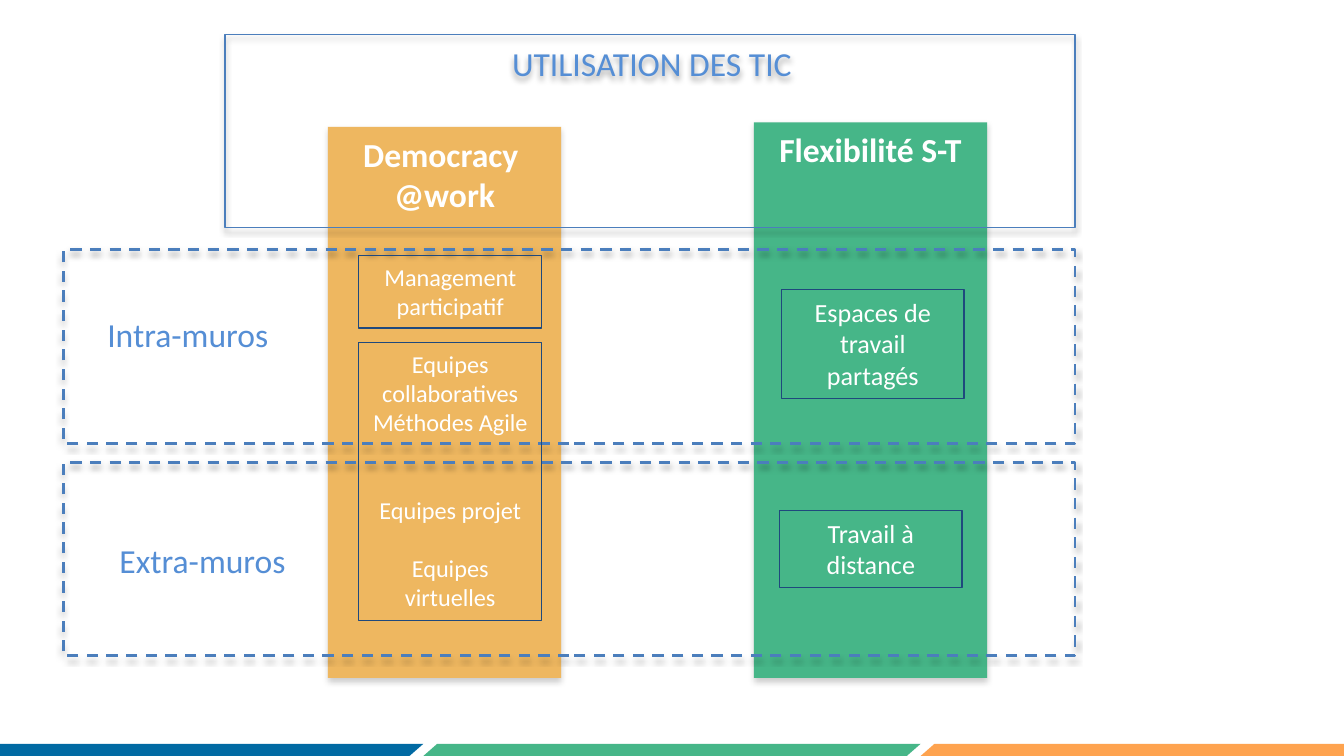
from dataclasses import dataclass
from typing import Optional

import lxml.etree
import pptx
import pptx.dml.color
import pptx.enum.dml
import pptx.enum.shapes
import pptx.enum.text
import pptx.oxml.ns
import pptx.util

EMU_PER_PX = 4572  # 200 px to the inch
SLIDE_WIDTH, SLIDE_HEIGHT = 2000, 1125
FONT = "Calibri"
WHITE, LABEL_BLUE = "FFFFFF", "558ED5"
BAND_LINE, BOX_LINE = "4B7EBC", "1F497D"
ORANGE, GREEN = "EEB760", "46B688"
FOOTER_COLOURS = ("016AA3", GREEN, "FEA34F")
LINE_GAP = 15.6  # points, one line of 13 pt text

ALIGN = pptx.enum.text.PP_ALIGN
ANCHOR = pptx.enum.text.MSO_ANCHOR
SHAPE = pptx.enum.shapes.MSO_SHAPE


@dataclass(frozen=True)
class Line:
    text: str
    space_before: float = 0


@dataclass(frozen=True)
class Block:
    left: int
    top: int
    width: int
    height: int
    lines: tuple[Line, ...] = ()
    size: int = 18
    bold: bool = False
    fill: Optional[str] = None
    line: Optional[str] = None
    line_width: float = 0.75
    dashed: bool = False
    shadow_opacity: int = 0


def px(length: int) -> pptx.util.Emu:
    return pptx.util.Emu(length * EMU_PER_PX)


def colour(value: str) -> pptx.dml.color.RGBColor:
    return pptx.dml.color.RGBColor.from_string(value)


def add_shadow(shape, opacity: int) -> None:
    """Give the shape a soft black shadow falling straight down."""
    qn = pptx.oxml.ns.qn
    shape.shadow.inherit = False
    effects = shape._element.spPr.find(qn("a:effectLst"))
    shadow = lxml.etree.SubElement(
        effects, qn("a:outerShdw"), blurRad="40000", dist="23000",
        dir="5400000", rotWithShape="0")
    black = lxml.etree.SubElement(shadow, qn("a:srgbClr"), val="000000")
    lxml.etree.SubElement(black, qn("a:alpha"), val=str(opacity * 1000))


def write_lines(frame, lines: tuple[Line, ...], size: int, text_colour: str,
                alignment: ALIGN, bold: bool = False) -> None:
    for index, line in enumerate(lines):
        paragraph = frame.paragraphs[0] if index == 0 else frame.add_paragraph()
        paragraph.alignment = alignment
        paragraph.space_before = pptx.util.Pt(line.space_before)
        run = paragraph.add_run()
        run.text = line.text
        run.font.name = FONT
        run.font.size = pptx.util.Pt(size)
        run.font.bold = bold
        run.font.color.rgb = colour(text_colour)


def add_block(slide, block: Block) -> None:
    shape = slide.shapes.add_shape(
        SHAPE.RECTANGLE, px(block.left), px(block.top),
        px(block.width), px(block.height))
    shape.shadow.inherit = False
    if block.shadow_opacity:
        add_shadow(shape, block.shadow_opacity)
    if block.fill:
        shape.fill.solid()
        shape.fill.fore_color.rgb = colour(block.fill)
    else:
        shape.fill.background()
    if block.line:
        shape.line.color.rgb = colour(block.line)
        shape.line.width = pptx.util.Pt(block.line_width)
        if block.dashed:
            shape.line.dash_style = pptx.enum.dml.MSO_LINE.DASH
    else:
        shape.line.fill.background()
    frame = shape.text_frame
    frame.word_wrap = True
    frame.vertical_anchor = ANCHOR.TOP
    write_lines(frame, block.lines, block.size, WHITE, ALIGN.CENTER, block.bold)


def add_title(slide, text: str) -> None:
    title = slide.shapes.title
    title.left, title.top, title.width, title.height = map(px, (742, 54, 466, 80))
    add_shadow(title, 35)
    frame = title.text_frame
    frame.auto_size = pptx.enum.text.MSO_AUTO_SIZE.NONE
    frame.word_wrap = True
    frame.vertical_anchor = ANCHOR.TOP
    write_lines(frame, (Line(text),), 18, LABEL_BLUE, ALIGN.LEFT)


def add_label(slide, text: str, left: int, top: int, width: int) -> None:
    label = slide.shapes.add_textbox(px(left), px(top), px(width), px(80))
    label.text_frame.word_wrap = False
    write_lines(label.text_frame, (Line(text),), 18, LABEL_BLUE, ALIGN.LEFT)


def add_footer(slide) -> None:
    width, height = 740, 18
    start = (SLIDE_WIDTH - width * len(FOOTER_COLOURS)) // 2
    for index, stripe_colour in enumerate(FOOTER_COLOURS):
        stripe = slide.shapes.add_shape(
            SHAPE.PARALLELOGRAM, px(start + index * width),
            px(SLIDE_HEIGHT - height), px(width), px(height))
        stripe.adjustments[0] = 1.14
        stripe.shadow.inherit = False
        stripe.fill.solid()
        stripe.fill.fore_color.rgb = colour(stripe_colour)
        stripe.line.fill.background()


def column(left: int, top: int, fill: str, *headings: str) -> Block:
    return Block(left, top, 347, 1009 - top, tuple(map(Line, headings)),
                 bold=True, fill=fill, shadow_opacity=20)


def band(left: int, top: int, dashed: bool) -> Block:
    return Block(left, top, 1600 - left, 288, line=BAND_LINE, dashed=dashed,
                 line_width=1.5 if dashed else 0.75, shadow_opacity=35)


def practice(left: int, top: int, height: int, size: int, *lines: Line) -> Block:
    return Block(left, top, 272, height, lines, size, line=BOX_LINE)


BLOCKS = (
    column(488, 189, ORANGE, "Democracy ", "@work"),
    column(1122, 182, GREEN, "Flexibilité S-T"),
    band(335, 51, dashed=False),
    band(94, 372, dashed=True),
    band(94, 688, dashed=True),
    practice(534, 380, 108, 13, Line("Management participatif")),
    practice(534, 510, 414, 13,
             Line("Equipes collaboratives"),
             Line("Méthodes Agile"),
             Line("Equipes projet", 2 * LINE_GAP),
             Line("Equipes virtuelles", LINE_GAP)),
    practice(1163, 431, 162, 14, Line("Espaces de travail partagés")),
    practice(1160, 760, 114, 14, Line("Travail à distance")),
)


def main() -> None:
    presentation = pptx.Presentation()
    presentation.slide_width = px(SLIDE_WIDTH)
    presentation.slide_height = px(SLIDE_HEIGHT)
    slide = presentation.slides.add_slide(presentation.slide_layouts[5])
    add_title(slide, "UTILISATION DES TIC")
    for block in BLOCKS:
        add_block(slide, block)
    add_label(slide, "Intra-muros", 140, 458, 284)
    add_label(slide, "Extra-muros", 158, 794, 292)
    add_footer(slide)
    presentation.save("out.pptx")


if __name__ == "__main__":
    main()
